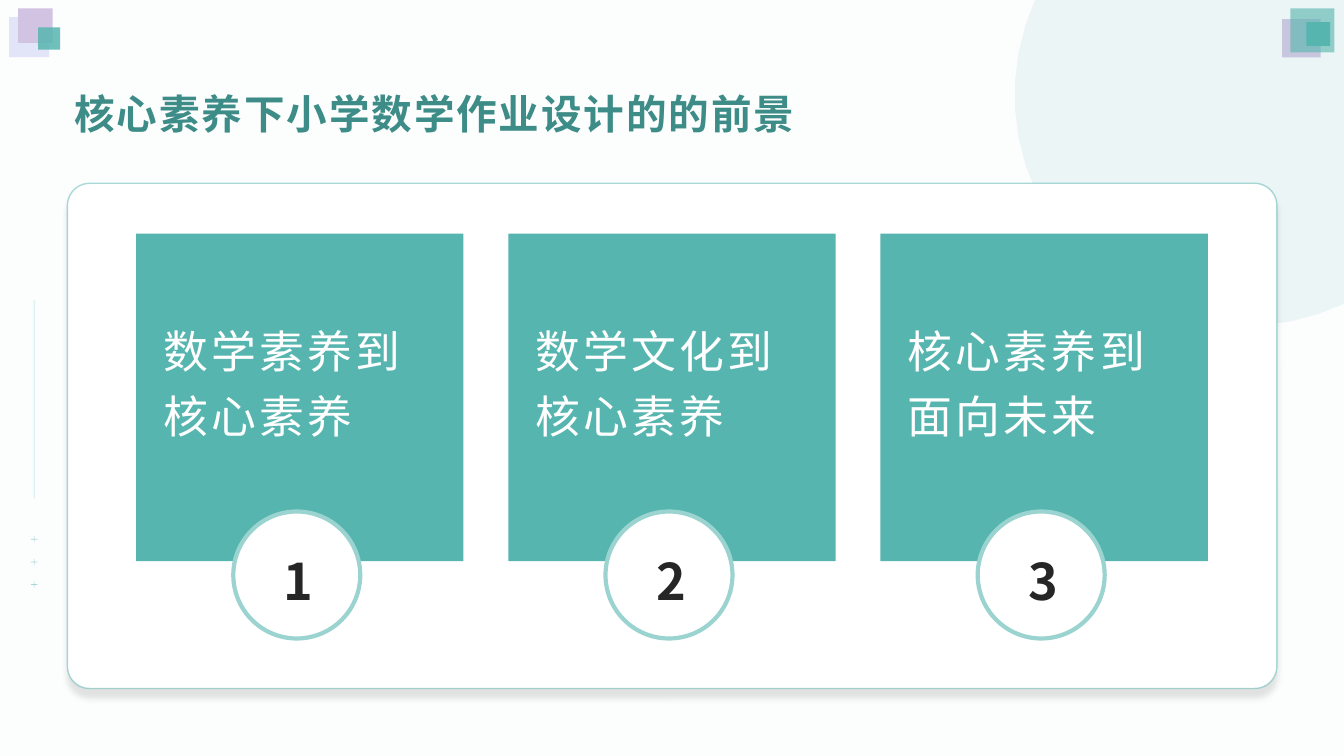
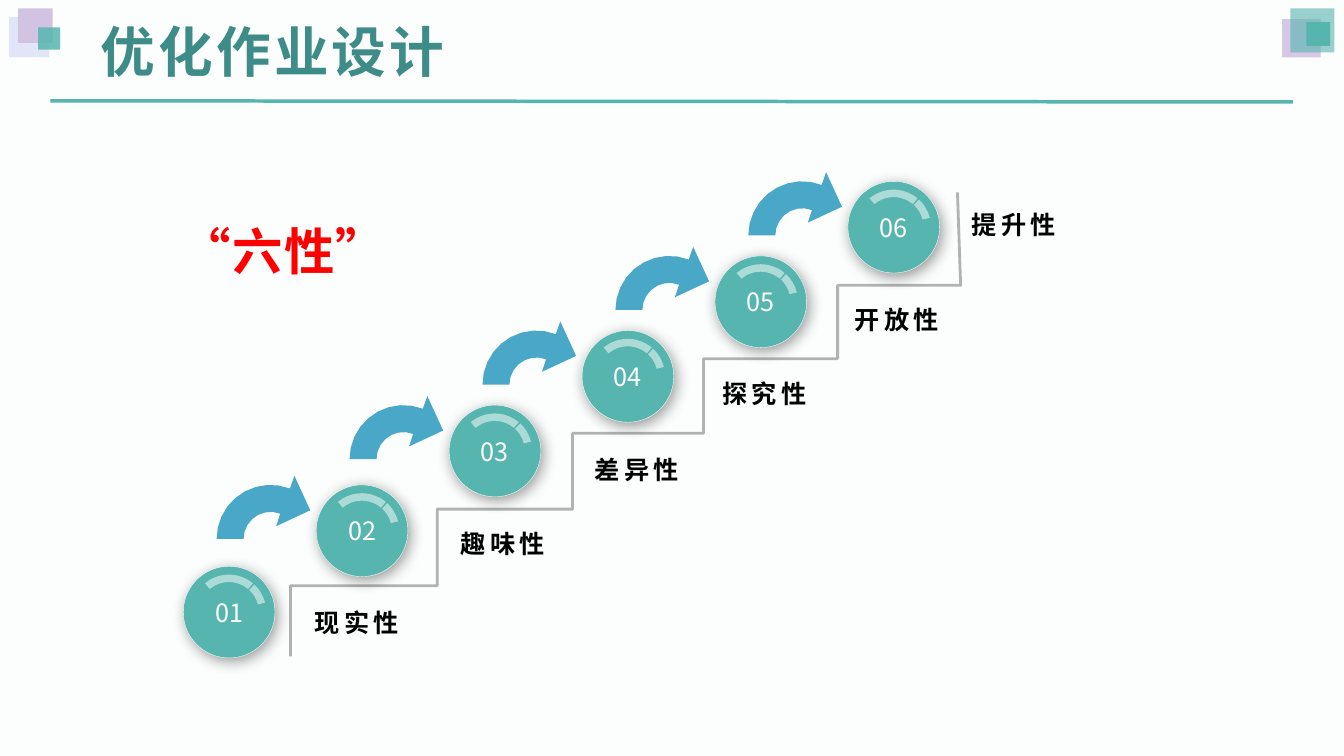
import math
import pptx
import pptx.util
import pptx.dml.color
import pptx.enum.shapes
import pptx.enum.text
import pptx.oxml.ns
import lxml.etree

Cm = pptx.util.Cm
Pt = pptx.util.Pt
RGB = pptx.dml.color.RGBColor
Kind = pptx.enum.shapes.MSO_SHAPE
Anchor = pptx.enum.text.MSO_ANCHOR
Align = pptx.enum.text.PP_ALIGN
qn = pptx.oxml.ns.qn

FONT = "Noto Sans CJK SC"
PAPER = RGB(0xFC, 0xFD, 0xFD)
WHITE = RGB(0xFF, 0xFF, 0xFF)
BLACK = RGB(0x00, 0x00, 0x00)
INK = RGB(0x26, 0x26, 0x26)
RED = RGB(0xFF, 0x00, 0x00)
TEAL = RGB(0x57, 0xB5, 0xAF)
DEEP = RGB(0x3D, 0x8C, 0x87)
MINT = RGB(0x9A, 0xD3, 0xCF)
MAUVE = RGB(0xBC, 0xA5, 0xD4)
LILAC = RGB(0xD3, 0xC3, 0xE3)
MIST = RGB(0xE1, 0xE5, 0xF7)
BLUE = RGB(0x49, 0xA7, 0xC8)
GREY = RGB(0xB2, 0xB2, 0xB2)

WIDE, HIGH = 33.87, 19.05
CARDS = ["数学素养到核心素养", "数学文化到核心素养", "核心素养到面向未来"]
STEPS = [
    ("现实性", 14.27, 7.42, 14.81),
    ("趣味性", 12.22, 11.1, 12.83),
    ("差异性", 10.21, 14.48, 10.97),
    ("探究性", 8.33, 17.7, 9.04),
    ("开放性", 6.45, 21.03, 7.19),
    ("提升性", 4.57, 23.98, 4.8),
]
STAIRS = [
    (7.32, 16.54), (7.32, 14.76), (11.02, 14.76), (11.02, 12.83),
    (14.43, 12.83), (14.43, 10.92), (17.73, 10.92), (17.73, 9.04),
    (21.11, 9.04), (21.11, 7.19), (24.21, 7.19), (24.13, 4.85),
]


def cm(*sizes):
    return [Cm(size) for size in sizes]


def fade(node, share):
    color = node.find(".//" + qn("a:srgbClr"))
    lxml.etree.SubElement(color, qn("a:alpha"), val=str(share * 1000))


def cast(shape, share, blur, far, turn):
    effects = shape.element.spPr.find(qn("a:effectLst"))
    outer = lxml.etree.SubElement(
        effects, qn("a:outerShdw"), blurRad=str(Pt(blur)), dist=str(Pt(far)),
        dir=str(turn * 60000), algn="ctr", rotWithShape="0")
    lxml.etree.SubElement(outer, qn("a:srgbClr"), val=str(BLACK))
    fade(outer, share)


def paint(shape, fill=None, alpha=100, line=None, width=1, clear=100):
    shape.shadow.inherit = False
    props = shape.element.spPr
    if fill is None:
        shape.fill.background()
    else:
        shape.fill.solid()
        shape.fill.fore_color.rgb = fill
        if alpha < 100:
            fade(props.find(qn("a:solidFill")), alpha)
    if line is None:
        shape.line.fill.background()
    else:
        shape.line.color.rgb = line
        shape.line.width = Pt(width)
        if clear < 100:
            fade(props.find(qn("a:ln")), clear)
    return shape


def draw(page, kind, box, **look):
    return paint(page.shapes.add_shape(kind, *cm(*box)), **look)


def trace(page, points, close=True, frame=(), **look):
    spots = [cm(*point) for point in [*frame, *points]]
    pen = page.shapes.build_freeform(*spots[0], scale=1.0)
    first = len(frame)
    for spot in spots[1:first + 1]:
        pen.move_to(*spot)
    pen.add_line_segments(spots[first + 1:], close=close)
    return paint(pen.convert_to_shape(), **look)


def rule(page, ends, width, alpha=100):
    line = page.shapes.add_connector(
        pptx.enum.shapes.MSO_CONNECTOR.STRAIGHT, *cm(*ends))
    line.line.color.rgb = TEAL
    line.line.width = Pt(width)
    props = line._element.spPr
    if alpha < 100:
        fade(props.find(qn("a:ln")), alpha)
    lxml.etree.SubElement(props, qn("a:effectLst"))


def write(shape, words, size=18, color=WHITE, bold=False, track=0,
          inset=(0, 0), anchor=Anchor.MIDDLE, align=Align.LEFT,
          lead=None, after=None):
    frame = shape.text_frame
    frame.word_wrap = True
    frame.vertical_anchor = anchor
    frame.margin_left, frame.margin_top = cm(*inset)
    frame.margin_right, frame.margin_bottom = cm(*inset)
    para = frame.paragraphs[0]
    para.alignment = align
    if lead:
        para.line_spacing = lead
    if after:
        para.space_after = Pt(after)
    run = para.add_run()
    run.text = words
    font = run.font
    font.name = FONT
    font.size = Pt(size)
    font.bold = bold
    font.color.rgb = color
    props = run._r.get_or_add_rPr()
    if track:
        props.set("spc", str(round(track * 100)))
    lxml.etree.SubElement(props, qn("a:ea"), typeface=FONT)


def note(page, box, words, **form):
    write(page.shapes.add_textbox(*cm(*box)), words, **form)


def title(page, box, words, **form):
    note(page, box, words, color=DEEP, bold=True, **form)


def polar(x, y, radius, turn):
    angle = math.radians(turn)
    return x + radius * math.cos(angle), y + radius * math.sin(angle)


def arc(x, y, radius, start, stop, count):
    gap = (stop - start) / count
    return [polar(x, y, radius, start + gap * i) for i in range(count + 1)]


def base(deck):
    page = deck.slides.add_slide(deck.slide_layouts[6])
    page.background.fill.solid()
    page.background.fill.fore_color.rgb = PAPER
    for left, top, side, fill, alpha in [
        (32.31, 0.48, 0.97, MAUVE, 60),
        (32.52, 0.21, 1.11, TEAL, 61),
        (32.92, 0.56, 0.6, TEAL, 100),
        (0.23, 0.43, 1.01, MIST, 100),
        (0.46, 0.21, 0.87, LILAC, 100),
        (0.96, 0.69, 0.56, TEAL, 85),
    ]:
        draw(page, Kind.RECTANGLE, (left, top, side, side),
             fill=fill, alpha=alpha)
    return page


def rail(page, x, top):
    rule(page, (x, top, x, top + 4.98), 0.5, 50)
    for i in range(3):
        y = top + 6.02 + 0.57 * i
        rule(page, (x, y - 0.08, x, y + 0.08), 0.5, 50)
        rule(page, (x - 0.08, y, x + 0.08, y), 0.5, 50)


def card(page, left, top, words, number):
    draw(page, Kind.RECTANGLE, (left, top, 8.25, 8.25), fill=TEAL)
    draw(page, Kind.OVAL, (left + 2.45, top + 7, 3.2, 3.2),
         fill=WHITE, line=MINT, width=3)
    note(page, (left + 0.43, top + 1.87, 7.24, 3.99), words, size=32,
         track=2.4, inset=(0.25, 0.13), anchor=Anchor.TOP, lead=1.2, after=8)
    note(page, (left + 2.5, top + 7.04, 3.2, 2.92), str(number), size=36,
         color=INK, bold=True, track=3, align=Align.CENTER, lead=1.3)


def glint(page, box, start, stop, turn):
    band = draw(page, Kind.BLOCK_ARC, box, fill=WHITE, alpha=50)
    band.adjustments[0] = start * 0.6
    band.adjustments[1] = stop * 0.6
    band.adjustments[2] = 0.1
    band.rotation = turn


def ball(page, left, top, number):
    disc = draw(page, Kind.OVAL, (left, top, 2.31, 2.31),
                fill=TEAL, line=WHITE, width=0.25)
    cast(disc, 40, 11, 3, 56)
    write(disc, f"{number:02d}", align=Align.CENTER)
    box = (left + 0.21, top + 0.21, 1.88, 1.88)
    glint(page, box, 230, 310, 0)
    glint(page, box, 254, 287, 58.8)


def arrow(page, left, top):
    x, y = left + 1.36, top + 1.36
    head = [(x + 0.6, y - 1.59), (x + 1, y - 0.72), (x + 0.14, y - 0.32)]
    outer = arc(x, y, 1.36, 180, 291, 9)
    inner = arc(x, y, 0.68, 291, 180, 7)
    frame = [(x - 1.75, y - 1.75), (x + 1.75, y + 1.75)]
    trace(page, outer + head + inner, frame=frame, fill=BLUE)


def future(deck):
    page = base(deck)
    moon = arc(31.39, 2.39, 5.82, 65, 204.2, 20)
    trace(page, moon + [(WIDE, 0), (WIDE, 7.65)], fill=TEAL, alpha=10)
    rail(page, 0.86, 7.57)
    panel = draw(page, Kind.ROUNDED_RECTANGLE, (1.7, 4.62, 30.48, 12.73),
                 fill=WHITE, line=TEAL, clear=50)
    panel.adjustments[0] = 0.044
    cast(panel, 11, 4, 6, 90)
    title(page, (1.7, 1.92, 24.13, 1.88), "核心素养下小学数学作业设计的的前景",
          size=29, track=1.3, inset=(0.18, 0.08))
    for i, words in enumerate(CARDS):
        card(page, 3.43 + 9.38 * i, 5.89, words, i + 1)


def climb(deck):
    page = base(deck)
    rule(page, (1.27, 2.54, 32.59, 2.57), 2.5)
    title(page, (2.54, 0.43, 31.32, 1.7), "优化作业设计", size=39, track=2.3)
    note(page, (4.37, 5.15, 6.73, 2.01), "“六性”", size=36, color=RED,
         bold=True, track=1, inset=(0.18, 0.08), lead=1.2, after=8)
    trace(page, STAIRS, close=False, line=GREY, width=2)
    for i, (words, top, x, y) in enumerate(STEPS):
        left = 4.62 + 3.35 * i
        ball(page, left, top, i + 1)
        if i:
            arrow(page, left - 2.51, top)
        note(page, (x, y, 5.54, 1.73), words, color=BLACK, bold=True,
             track=3, inset=(0.51, 0))


def main():
    deck = pptx.Presentation()
    deck.slide_width, deck.slide_height = cm(WIDE, HIGH)
    future(deck)
    climb(deck)
    deck.save("out.pptx")


if __name__ == "__main__":
    main()
